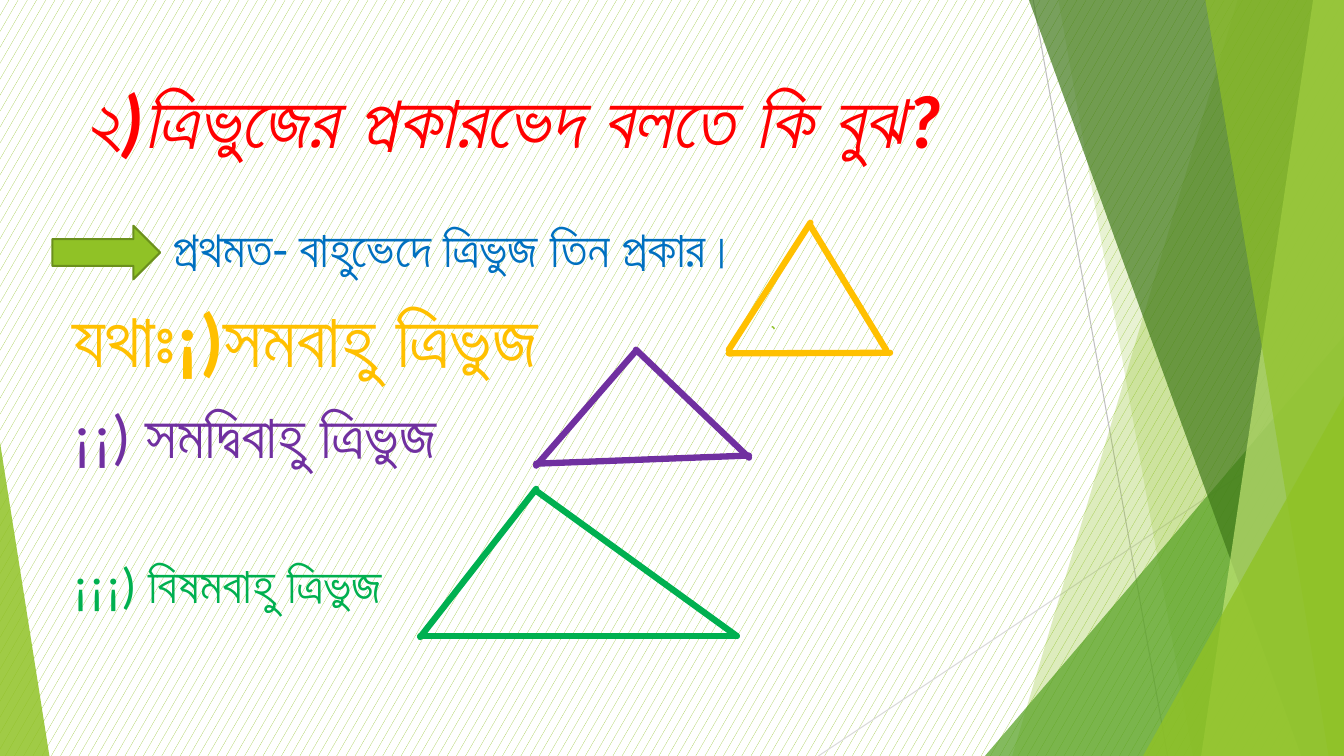
from lxml.etree import SubElement
from pptx import Presentation
from pptx.dml.color import RGBColor
from pptx.enum.dml import MSO_PATTERN
from pptx.enum.shapes import MSO_CONNECTOR as Connector, MSO_SHAPE as Preset
from pptx.enum.text import MSO_ANCHOR, MSO_AUTO_SIZE, PP_ALIGN
from pptx.oxml.ns import qn
from pptx.util import Pt

WIDTH, HEIGHT = 960, 540
LEAF, GOLD, PURPLE, GREEN = "90C226", "FFC000", "7030A0", "00B050"


def colour(value):
    return RGBColor.from_string(value)


def apply(target, values):
    for name, value in values.items():
        setattr(target, name, value)


def points(*numbers):
    return [Pt(number) for number in numbers]


def place(shape, left, top, width, height):
    names = ("left", "top", "width", "height")
    apply(shape, dict(zip(names, points(left, top, width, height))))


def paint(shape, fill, opacity=100):
    shape.shadow.inherit = False
    shape.line.fill.background()
    shape.fill.solid()
    shape.fill.fore_color.rgb = colour(fill)
    if opacity < 100:
        shade = shape._element.spPr.find(".//" + qn("a:srgbClr"))
        SubElement(shade, qn("a:alpha"), val=str(opacity * 1000))


def outline(shape, line, weight):
    shape.line.fill.solid()
    shape.line.fill.fore_color.rgb = colour(line)
    shape.line.width = Pt(weight)


def add_line(page, start, end, line, weight, cap="flat"):
    connector = page.shapes.add_connector(Connector.STRAIGHT, *points(*start, *end))
    outline(connector, line, weight)
    connector.line._get_or_add_ln().set("cap", cap)
    SubElement(connector._element.spPr, qn("a:effectLst"))


def add_band(page, top_x, bottom_x, fill, opacity):
    builder = page.shapes.build_freeform(Pt(top_x), 0)
    corners = [(WIDTH, 0), (WIDTH, HEIGHT), (bottom_x, HEIGHT)]
    builder.add_line_segments([points(*corner) for corner in corners], close=True)
    paint(builder.convert_to_shape(), fill, opacity)


def add_wedge(page, left, top, width, peak, fill, opacity):
    wedge = page.shapes.add_shape(
        Preset.ISOSCELES_TRIANGLE, *points(left, top, width, HEIGHT - top))
    wedge.adjustments[0] = peak
    paint(wedge, fill, opacity)


def add_backdrop(page):
    fill = page.background.fill
    fill.patterned()
    fill.pattern = MSO_PATTERN.SMALL_CONFETTI
    fill.fore_color.rgb = colour(LEAF)
    fill.back_color.rgb = colour("FFFFFF")
    add_line(page, (738, 0), (834, HEIGHT), "BFBFBF", 0.75)
    add_line(page, (WIDTH, 290), (584.6, HEIGHT), "D9D9D9", 0.75)
    add_band(page, 884, 723, LEAF, 30)
    add_band(page, 756, 852, LEAF, 20)
    add_wedge(page, 703.5, 240, 256.5, 1, "54A021", 72)
    add_band(page, 735, 929.5, "3F7819", 70)
    add_band(page, 938, 858, "C0E474", 70)
    add_band(page, 861, 949, LEAF, 65)
    add_wedge(page, 816.5, 283, 143.5, 1, LEAF, 80)
    add_wedge(page, 0, 316, 35.3, 0, LEAF, 85)


def prepare_frame(frame):
    apply(frame, {"word_wrap": True, "auto_size": MSO_AUTO_SIZE.NONE,
                  "vertical_anchor": MSO_ANCHOR.TOP})


def write(para, text, size, ink, bold=False, italic=False):
    para.alignment = PP_ALIGN.LEFT
    span = para.add_run()
    span.text = text
    apply(span.font, {"name": "Calibri", "size": Pt(size),
                      "bold": bold, "italic": italic})
    span.font.color.rgb = colour(ink)


def add_title(page, text):
    title = page.shapes.title
    place(title, 53.3, 48.2, 676.8, 103.7)
    prepare_frame(title.text_frame)
    write(title.text_frame.paragraphs[0], text, 54, "FF0000", True, True)


def add_body(page, lines):
    box = page.shapes.add_textbox(*points(44.6, 151.9, 676.8, 305.3))
    frame = box.text_frame
    prepare_frame(frame)
    for index, (text, size, ink, bold, indent, before) in enumerate(lines):
        para = frame.add_paragraph() if index else frame.paragraphs[0]
        para.space_before = Pt(before)
        write(para, text, size, ink, bold)
        para._p.get_or_add_pPr().set("indent", str(Pt(indent)))


def add_triangle(page, ink, sides):
    for start, end in sides:
        add_line(page, start, end, ink, 4.5, "rnd")


def main():
    deck = Presentation()
    deck.slide_width, deck.slide_height = points(WIDTH, HEIGHT)
    page = deck.slides.add_slide(deck.slide_layouts[5])
    add_backdrop(page)
    add_title(page, "২)ত্রিভুজের প্রকারভেদ বলতে কি বুঝ?")
    add_body(page, [
        ("প্রথমত- বাহুভেদে ত্রিভুজ তিন প্রকার।", 36, "0070C0", False, 72, 10),
        ("যথাঃ¡)সমবাহু ত্রিভুজ", 54, GOLD, True, 0, 10),
        ("¡¡) সমদ্বিবাহু ত্রিভুজ", 44, PURPLE, False, 0, 10),
        ("¡¡¡) বিষমবাহু ত্রিভুজ", 36, GREEN, False, 0, 59),
    ])
    arrow = page.shapes.add_shape(Preset.RIGHT_ARROW, *points(37.4, 161.3, 77, 38.2))
    paint(arrow, LEAF)
    outline(arrow, "6B901C", 1.5)
    add_triangle(page, GOLD, [((520.6, 249.8), (578.9, 159.1)),
                              ((578.9, 161.3), (632.9, 249.8)),
                              ((520.6, 252.4), (635.8, 252))])
    arc = page.shapes.add_shape(Preset.ARC, *points(549.4, 233.3, 3.6, 3.6))
    arc.shadow.inherit = False
    arc.fill.background()
    outline(arc, LEAF, 1)
    add_triangle(page, PURPLE, [((383, 332.6), (454.3, 250.6)),
                                ((454.3, 249.8), (535, 326.9)),
                                ((383, 331.2), (535, 325.4))])
    add_triangle(page, GREEN, [((383, 350.6), (526.3, 454.3)),
                               ((300.2, 454.3), (526.3, 454.3)),
                               ((383, 349.2), (300.2, 455))])
    deck.save("out.pptx")


if __name__ == "__main__":
    main()
